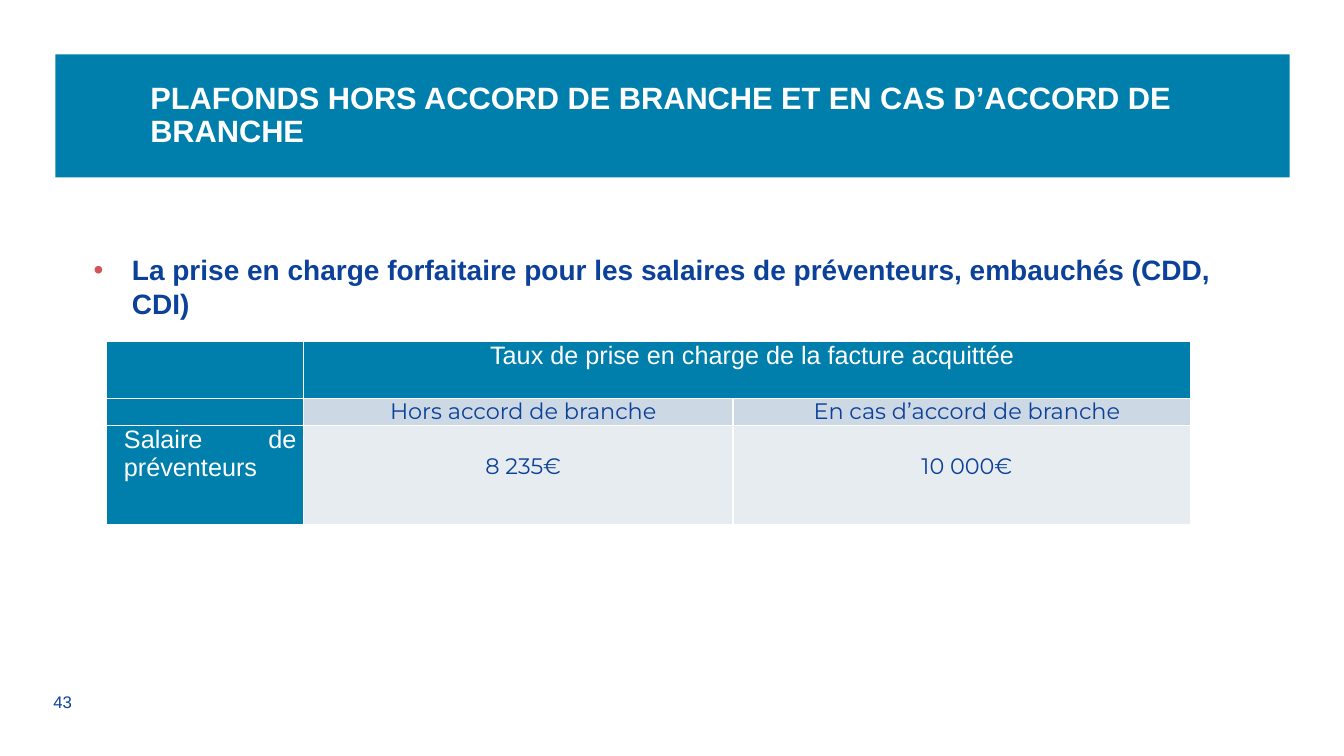
from dataclasses import dataclass

from lxml.etree import SubElement
from pptx import Presentation
from pptx.dml.color import RGBColor
from pptx.enum.shapes import MSO_SHAPE
from pptx.enum.text import MSO_ANCHOR as ANCHOR, PP_ALIGN as ALIGN
from pptx.oxml.ns import qn
from pptx.util import Emu, Inches, Pt

COLORS = {"teal": "007FAD", "navy": "0C419A", "white": "FFFFFF",
          "red": "D05559", "subhead": "CCD8E3", "value": "E7ECF1"}
WIDTH, HEIGHT = Inches(13.33), Inches(7.5)
COLUMNS = (14.63, 31.96, 34.06)  # percent of slide width
ROWS = (7.47, 3.6, 13.07)  # percent of slide height


@dataclass
class Cell:
    row: int
    col: int
    text: str = ""
    fill: str = "teal"
    color: str = "white"
    font: str = "Arial"
    size: int = 18
    align: ALIGN = ALIGN.CENTER
    top: float = 0
    span: int = 1


def subhead(col: int, text: str) -> Cell:
    return Cell(1, col, text, "subhead", "navy", "Montserrat", 16)


def value(col: int, text: str) -> Cell:
    return Cell(2, col, text, "value", "navy", "Montserrat", 16, top=0.27)


CELLS = [
    Cell(0, 0),
    Cell(0, 1, "Taux de prise en charge de la facture acquittée", span=2),
    Cell(1, 0, size=16),
    subhead(1, "Hors accord de branche"),
    subhead(2, "En cas d’accord de branche"),
    Cell(2, 0, "Salaire de préventeurs", align=ALIGN.JUSTIFY),
    value(1, "8 235€"),
    value(2, "10 000€"),
]


def across(percent: float) -> Emu:
    return Emu(round(WIDTH * percent / 100))


def down(percent: float) -> Emu:
    return Emu(round(HEIGHT * percent / 100))


def box(left: float, top: float, width: float, height: float) -> tuple:
    """Turn percentages of the slide into a position and a size."""
    return across(left), down(top), across(width), down(height)


def rgb(name: str) -> RGBColor:
    return RGBColor.from_string(COLORS[name])


def write(tf, text: str, *, size: int, color: str = "navy", font: str = "Arial",
          bold: bool = False, align: ALIGN = ALIGN.LEFT, spacing: float = 1,
          anchor: ANCHOR = ANCHOR.TOP):
    tf.word_wrap = True
    tf.vertical_anchor = anchor
    p = tf.paragraphs[0]
    p.alignment, p.line_spacing = align, spacing
    r = p.add_run()
    r.text = text
    r.font.size, r.font.name, r.font.bold = Pt(size), font, bold
    r.font.color.rgb = rgb(color)
    return p


def indent(p, left: float, first: float = 0) -> None:
    pPr = p._p.get_or_add_pPr()
    pPr.set("marL", str(Inches(left)))
    pPr.set("indent", str(Inches(first)))


def add_bullet(p, color: str) -> None:
    pPr = p._p.get_or_add_pPr()
    clr = SubElement(pPr, qn("a:buClr"))
    SubElement(clr, qn("a:srgbClr"), val=COLORS[color])
    SubElement(pPr, qn("a:buFont"), typeface="Arial")
    SubElement(pPr, qn("a:buChar"), char="•")


def add_borders(cell) -> None:
    tcPr = cell._tc.get_or_add_tcPr()
    for i, side in enumerate(("lnL", "lnR", "lnT", "lnB")):
        ln = tcPr.makeelement(qn(f"a:{side}"), {"w": str(Pt(1))})
        fill = SubElement(ln, qn("a:solidFill"))
        SubElement(fill, qn("a:srgbClr"), val=COLORS["white"])
        tcPr.insert(i, ln)


def draw_cell(table, item: Cell) -> None:
    cell = table.cell(item.row, item.col)
    if item.span > 1:
        cell.merge(table.cell(item.row, item.col + item.span - 1))
    cell.margin_left = cell.margin_right = Inches(0.07)
    cell.margin_top, cell.margin_bottom = Inches(item.top), 0
    cell.fill.solid()
    cell.fill.fore_color.rgb = rgb(item.fill)
    add_borders(cell)
    tf = cell.text_frame
    if item.text:
        p = write(tf, item.text, size=item.size, color=item.color,
                  font=item.font, align=item.align)
        indent(p, 0.1)
    else:
        SubElement(tf.paragraphs[0]._p, qn("a:endParaRPr"), sz=str(item.size * 100))


def draw_title(s) -> None:
    sp = s.shapes.add_shape(MSO_SHAPE.RECTANGLE, *box(4.13, 7.2, 91.82, 16.27))
    sp.shadow.inherit = False
    sp.fill.solid()
    sp.fill.fore_color.rgb = rgb("teal")
    sp.line.fill.background()
    tf = sp.text_frame
    tf.margin_left = Inches(0.94)
    tf.margin_top = tf.margin_right = tf.margin_bottom = Inches(0.08)
    write(tf, "PLAFONDS HORS ACCORD DE BRANCHE ET EN CAS D’ACCORD DE BRANCHE",
          size=22, color="white", bold=True, spacing=0.9, anchor=ANCHOR.MIDDLE)


def draw_table(s) -> None:
    table = s.shapes.add_table(len(ROWS), len(COLUMNS),
                               *box(7.95, 45.2, sum(COLUMNS), sum(ROWS))).table
    table.first_row = table.horz_banding = False
    for column, share in zip(table.columns, COLUMNS):
        column.width = across(share)
    for row, share in zip(table.rows, ROWS):
        row.height = down(share)
    for item in CELLS:
        draw_cell(table, item)


def main() -> None:
    prs = Presentation()
    prs.slide_width, prs.slide_height = WIDTH, HEIGHT
    s = prs.slides.add_slide(prs.slide_layouts[6])

    number = s.shapes.add_textbox(*box(3.23, 90.8, 5.93, 4.13))
    write(number.text_frame, "43", size=12, anchor=ANCHOR.MIDDLE)
    draw_title(s)
    draw_table(s)
    heading = s.shapes.add_textbox(*box(6.23, 32.8, 89.35, 5.87))
    p = write(heading.text_frame, "La prise en charge forfaitaire pour les salaires "
              "de préventeurs, embauchés (CDD, CDI)", size=20, bold=True)
    indent(p, 0.38, -0.38)
    add_bullet(p, "red")

    prs.save("out.pptx")


if __name__ == "__main__":
    main()
